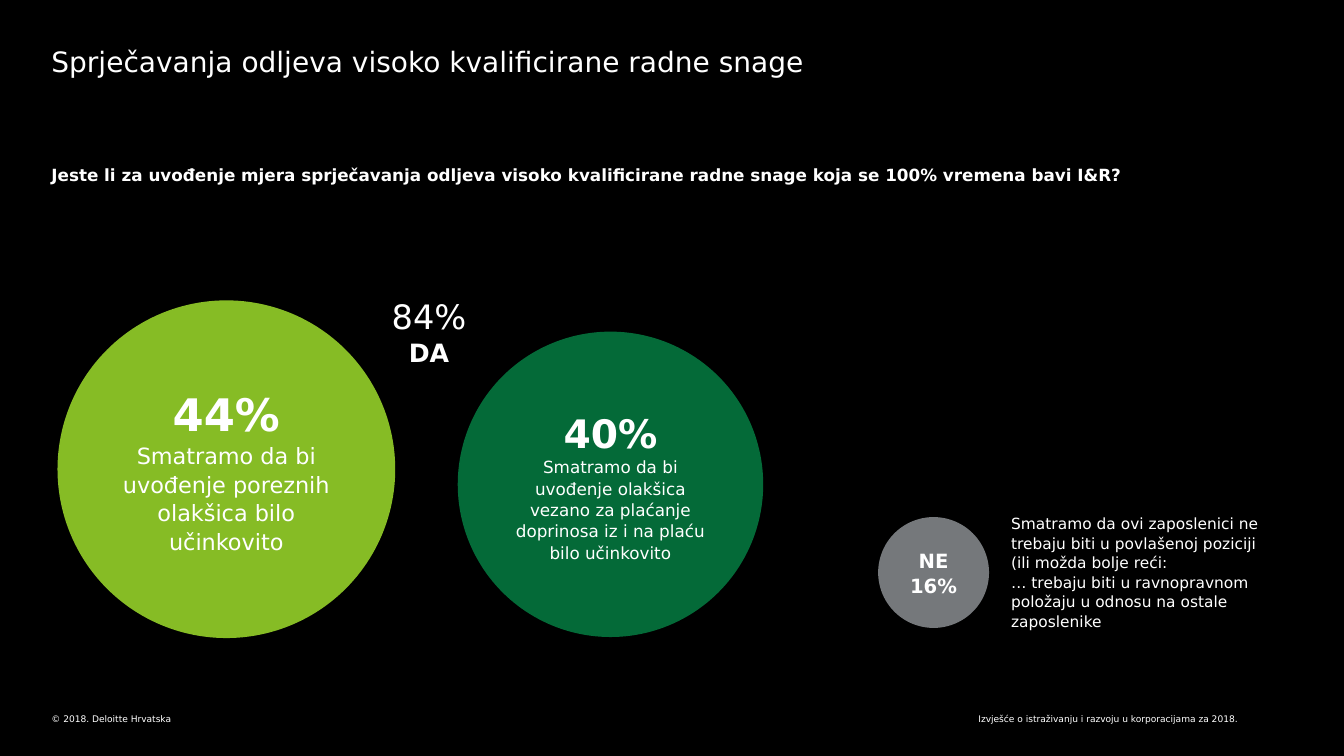
from pptx import Presentation
from pptx.dml.color import RGBColor
from pptx.enum.shapes import MSO_SHAPE
from pptx.enum.text import MSO_ANCHOR, PP_ALIGN
from pptx.util import Inches, Pt

COLORS = {"black": "000000", "white": "FFFFFF", "lime": "86BC25",
          "green": "046A38", "gray": "75787B"}
FONT = "DejaVu Sans"


def write(sp, lines, align=PP_ALIGN.LEFT, spacing=None, inset=(0, 0)):
    """Fill a shape with lines given as (text, size, bold)."""
    tf = sp.text_frame
    tf.word_wrap = True
    tf.margin_left = tf.margin_right = Inches(inset[0])
    tf.margin_top = tf.margin_bottom = Inches(inset[1])
    for i, (text, size, bold) in enumerate(lines):
        p = tf.add_paragraph() if i else tf.paragraphs[0]
        p.alignment = align
        if spacing:
            p.line_spacing = spacing
        r = p.add_run()
        r.text = text
        r.font.name = FONT
        r.font.size = Pt(size)
        r.font.bold = bold
        r.font.color.rgb = RGBColor.from_string(COLORS["white"])


def add_text(left, top, width, height, lines, **style):
    box = s.shapes.add_textbox(Inches(left), Inches(top), Inches(width), Inches(height))
    write(box, lines, **style)


prs = Presentation()
prs.slide_width = Inches(13.33)
prs.slide_height = Inches(7.5)
s = prs.slides.add_slide(prs.slide_layouts[6])
s.background.fill.solid()
s.background.fill.fore_color.rgb = RGBColor.from_string(COLORS["black"])

# Footer
add_text(6.93, 7.08, 5.35, 0.11,
         [("Izvješće o istraživanju i razvoju u korporacijama za 2018.", 6.5, False)],
         align=PP_ALIGN.RIGHT)
add_text(0.51, 7.08, 5.86, 0.11, [("© 2018. Deloitte Hrvatska", 6.5, False)])

# Title and survey question
add_text(0.51, 0.44, 12.31, 0.37,
         [("Sprječavanja odljeva visoko kvalificirane radne snage", 20, False)])
add_text(0.51, 1.63, 11.09, 0.3,
         [("Jeste li za uvođenje mjera sprječavanja odljeva visoko kvalificirane "
           "radne snage koja se 100% vremena bavi I&R?", 12, True)])

# Answer circles: left, top, diameter, color, lines
circles = [
    (0.57, 2.98, 3.35, "lime",
     [("44%", 32, True),
      ("Smatramo da bi uvođenje poreznih olakšica bilo učinkovito", 16, False)]),
    (4.54, 3.29, 3.03, "green",
     [("40%", 28, True),
      ("Smatramo da bi uvođenje olakšica vezano za plaćanje doprinosa "
       "iz i na plaću bilo učinkovito", 12, False)]),
    (8.71, 5.13, 1.1, "gray", [("NE", 14, True), ("16%", 14, True)]),
]
for left, top, size, color, lines in circles:
    sp = s.shapes.add_shape(MSO_SHAPE.OVAL, Inches(left), Inches(top),
                            Inches(size), Inches(size))
    sp.shadow.inherit = False
    sp.fill.solid()
    sp.fill.fore_color.rgb = RGBColor.from_string(COLORS[color])
    sp.line.fill.background()
    sp.text_frame.vertical_anchor = MSO_ANCHOR.MIDDLE
    write(sp, lines, align=PP_ALIGN.CENTER, spacing=1.06, inset=(0.1, 0.1))

# Explanation of the "no" answer and total of the "yes" answers
add_text(9.93, 5.04, 2.82, 1.28,
         [("Smatramo da ovi zaposlenici ne trebaju biti u povlašenoj poziciji "
           "(ili možda bolje reći:", 11, False),
          ("… trebaju biti u ravnopravnom položaju u odnosu na ostale zaposlenike",
           11, False)],
         spacing=1.06, inset=(0.1, 0.05))
add_text(3.05, 2.86, 2.41, 0.85, [("84%", 24, False), ("DA", 18, True)],
         align=PP_ALIGN.CENTER, spacing=1.06, inset=(0.1, 0.05))

prs.save("out.pptx")
